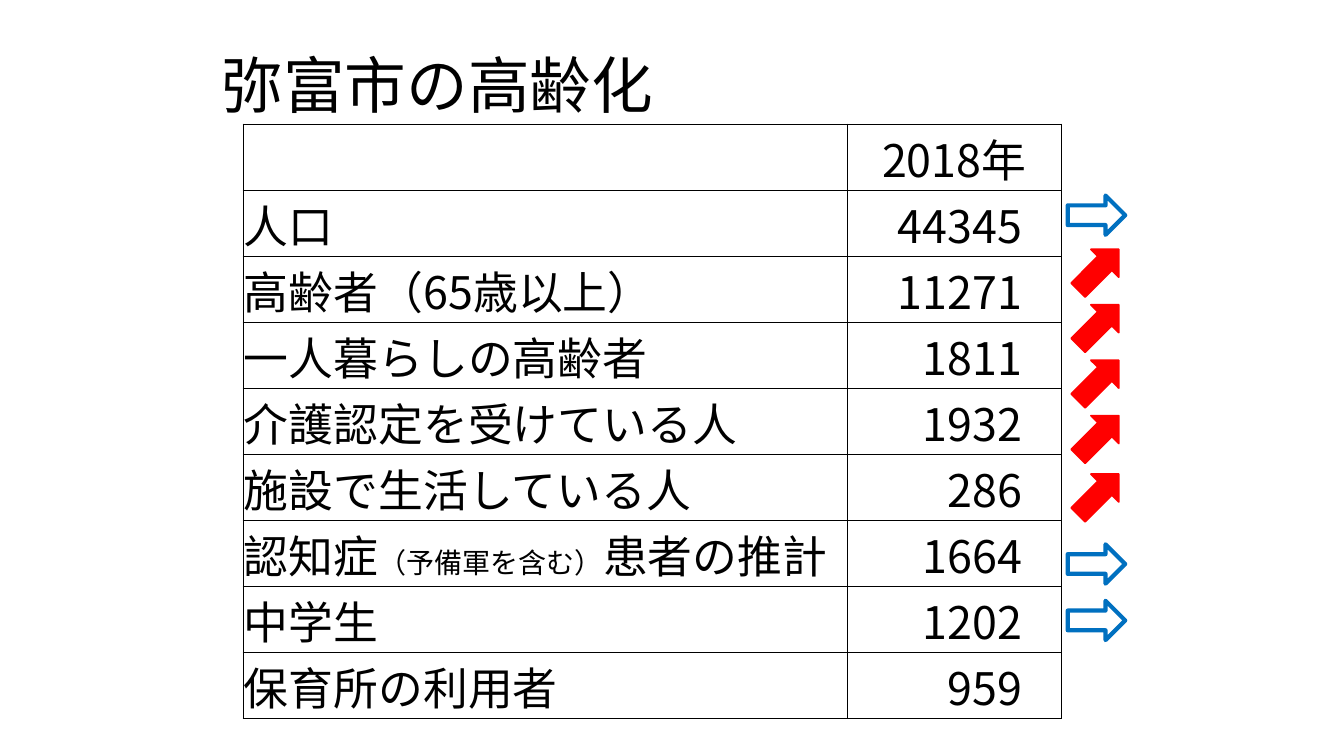
"""Build a slide on the ageing of Yatomi City: a 2018 table with trend arrows."""
from dataclasses import dataclass

from lxml.etree import SubElement
from pptx import Presentation
from pptx.dml.color import RGBColor
from pptx.enum.shapes import MSO_SHAPE as SHAPE
from pptx.enum.text import MSO_ANCHOR as ANCHOR, PP_ALIGN as ALIGN
from pptx.oxml.ns import qn
from pptx.util import Inches, Pt


@dataclass(frozen=True)
class Theme:
    black: str = "000000"
    steady: str = "0070C0"
    rising: str = "FF0000"
    latin: str = "Calibri"
    cjk: str = "Noto Sans CJK JP"
    title: int = 44
    body: int = 32
    small: int = 20


T = Theme()


def add_text(p, text, size=T.body, font=T.cjk, color=T.black, align=ALIGN.LEFT):
    p.alignment = align
    r = p.add_run()
    r.text = text
    r.font.size = Pt(size)
    r.font.bold = False
    r.font.color.rgb = RGBColor.from_string(color)
    r.font.name = font
    SubElement(r.font._element, qn("a:ea"), typeface=T.cjk)


def add_borders(cell):
    tc_pr = cell._tc.get_or_add_tcPr()
    for side in ("lnL", "lnR", "lnT", "lnB"):
        ln = SubElement(tc_pr, qn(f"a:{side}"), w=str(Pt(0.5)))
        fill = SubElement(ln, qn("a:solidFill"))
        SubElement(fill, qn("a:srgbClr"), val=T.black)


prs = Presentation()
prs.slide_width, prs.slide_height = Inches(13.33), Inches(7.5)
s = prs.slides.add_slide(prs.slide_layouts[6])

rows = [
    ("", "2018年"),
    ("人口", "44345"),
    ("高齢者（65歳以上）", "11271"),
    ("一人暮らしの高齢者", "1811"),
    ("介護認定を受けている人", "1932"),
    ("施設で生活している人", "286"),
    (("認知症", "（予備軍を含む）", "患者の推計"), "1664"),
    ("中学生", "1202"),
    ("保育所の利用者", "959"),
]
table = s.shapes.add_table(
    len(rows), 2, Inches(2.41), Inches(1.23), Inches(8.12), Inches(5.18)
).table
table.first_row = table.horz_banding = False
table.columns[0].width, table.columns[1].width = Inches(5.99), Inches(2.13)

for i, row in enumerate(rows):
    table.rows[i].height = Inches(0.58 if i else 0.54)
    for j, content in enumerate(row):
        cell = table.cell(i, j)
        add_borders(cell)
        cell.fill.background()
        cell.vertical_anchor = ANCHOR.MIDDLE
        cell.margin_left = cell.margin_top = Inches(0.01)
        cell.margin_right = Inches(0.39 if i and j else 0.01)
        cell.margin_bottom = 0
        align = ALIGN.LEFT if j == 0 else ALIGN.RIGHT if i else ALIGN.CENTER
        parts = (content,) if isinstance(content, str) else content
        for part in filter(None, parts):
            size = T.small if part.startswith("（") else T.body
            add_text(cell.text_frame.paragraphs[0], part, size=size, align=align)

steady = [(10.68, y, 270, T.steady, 3) for y in (1.85, 5.31, 5.87)]
rising = [(10.7, y, 225, T.rising, 1.25) for y in (2.39, 2.94, 3.49, 4.04, 4.62)]
for x, y, angle, color, weight in steady + rising:
    arrow = s.shapes.add_shape(
        SHAPE.DOWN_ARROW, Inches(x), Inches(y), Inches(0.39), Inches(0.57)
    )
    arrow.rotation = angle
    arrow.shadow.inherit = False
    arrow.line.color.rgb = RGBColor.from_string(color)
    arrow.line.width = Pt(weight)
    if color == T.rising:
        arrow.fill.solid()
        arrow.fill.fore_color.rgb = RGBColor.from_string(color)
    else:
        arrow.fill.background()

title = s.shapes.add_textbox(Inches(2.1), Inches(0.21), Inches(9.32), Inches(1.25))
tf = title.text_frame
tf.word_wrap = True
tf.vertical_anchor = ANCHOR.MIDDLE
add_text(tf.paragraphs[0], "弥富市の高齢化", size=T.title, font=T.latin)

prs.save("out.pptx")
